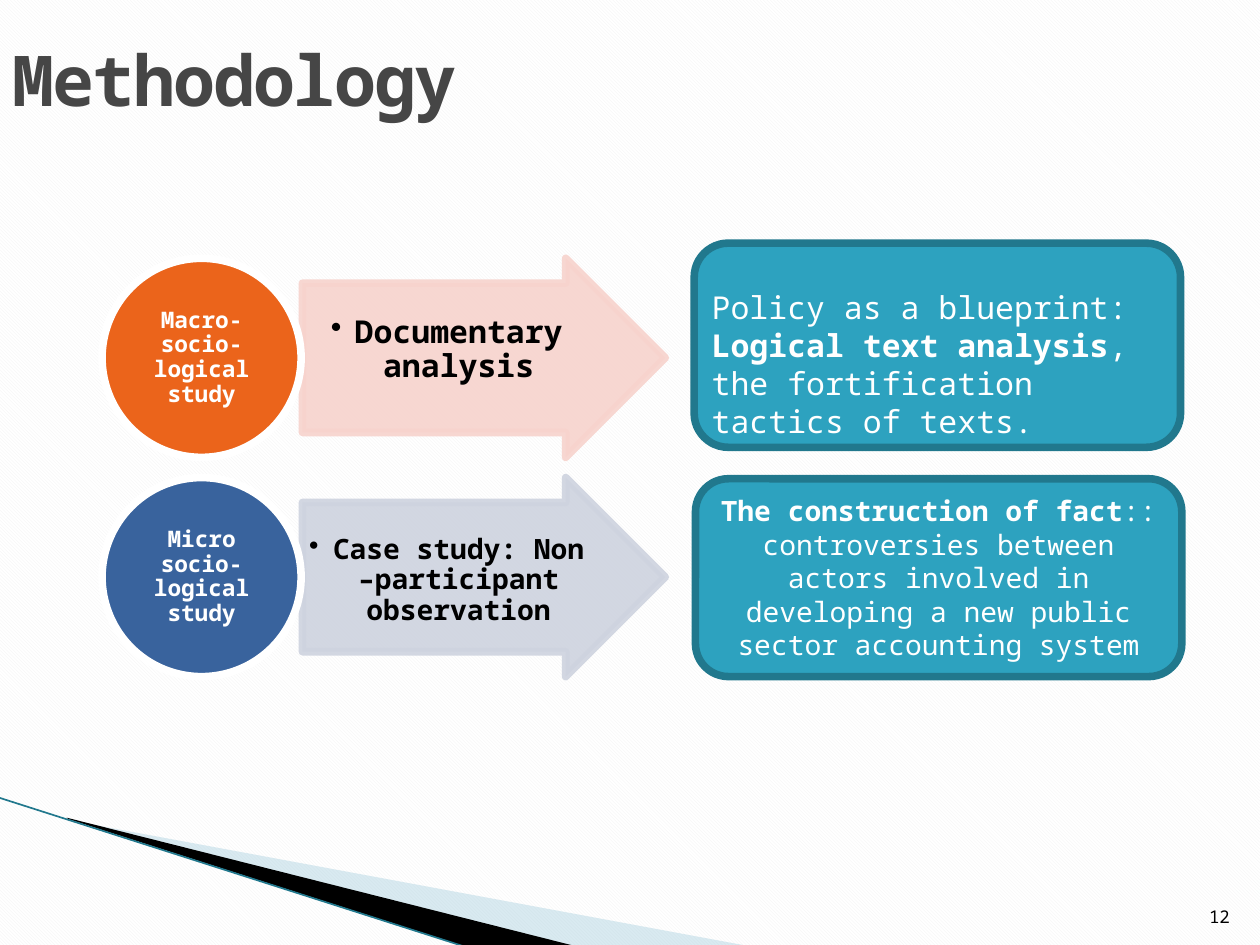
from lxml import etree
from pptx import Presentation
from pptx.dml.color import RGBColor
from pptx.enum.dml import MSO_PATTERN
from pptx.enum.shapes import MSO_CONNECTOR, MSO_SHAPE as SHAPE
from pptx.enum.text import MSO_ANCHOR as ANCHOR, PP_ALIGN as ALIGN
from pptx.oxml.ns import qn
from pptx.util import Inches, Pt

FONT = "Noto Sans Mono"
WHITE = RGBColor(0xFF, 0xFF, 0xFF)
BLACK = RGBColor(0, 0, 0)
HATCH = RGBColor(0xF2, 0xF2, 0xF2)
GREY = RGBColor(0x46, 0x46, 0x46)
PALE_BLUE = RGBColor(0xA0, 0xCB, 0xDC)
TEAL = RGBColor(0x2D, 0xA2, 0xBF)
DARK_TEAL = RGBColor(0x21, 0x78, 0x8D)
ORANGE = RGBColor(0xEB, 0x64, 0x1B)
BLUE = RGBColor(0x39, 0x63, 0x9D)
PINK = RGBColor(0xF7, 0xD3, 0xCD)
LAVENDER = RGBColor(0xCE, 0xD3, 0xDF)


def style(sp, fill, line=None, alpha=100):
    """Set fill, outline and opacity of a shape."""
    sp.shadow.inherit = False
    sp.fill.solid()
    sp.fill.fore_color.rgb = fill
    if line is None:
        sp.line.fill.background()
    else:
        sp.line.color.rgb = line
        sp.line.width = Pt(4.33)
    if alpha < 100:
        for clr in sp._element.spPr.iter(qn("a:srgbClr")):
            etree.SubElement(clr, qn("a:alpha"), val=str(alpha * 1000))


def write(sp, runs, size, color, align=ALIGN.LEFT, anchor=ANCHOR.TOP,
          margins=(0.1, 0.05, 0.1, 0.05)):
    """Fill a shape with one paragraph of (text, bold) runs."""
    tf = sp.text_frame
    tf.word_wrap = True
    tf.vertical_anchor = anchor
    (tf.margin_left, tf.margin_top,
     tf.margin_right, tf.margin_bottom) = [Inches(m) for m in margins]
    p = tf.paragraphs[0]
    p.alignment = align
    for text, bold in runs:
        r = p.add_run()
        r.text = text
        r.font.name = FONT
        r.font.size = Pt(size)
        r.font.bold = bold
        r.font.color.rgb = color
    return p


prs = Presentation()
prs.slide_width, prs.slide_height = Inches(10), Inches(7.5)
s = prs.slides.add_slide(prs.slide_layouts[6])

# Hatched background
bg = s.background.fill
bg.patterned()
bg.pattern = MSO_PATTERN.LIGHT_DOWNWARD_DIAGONAL
bg.fore_color.rgb = HATCH
bg.back_color.rgb = WHITE

# Swoosh in the lower left corner
wedges = [
    ([(0.55, 6.51), (5.95, 7.51), (4.56, 7.51), (0.55, 6.5)], PALE_BLUE, 40),
    ([(0.53, 6.49), (4.57, 7.51), (3.72, 7.52), (0.54, 6.5)], BLACK, 100),
]
for points, color, alpha in wedges:
    pts = [(Inches(x), Inches(y)) for x, y in points]
    fb = s.shapes.build_freeform(*pts[0])
    fb.add_line_segments(pts[1:])
    style(fb.convert_to_shape(), color, alpha=alpha)

edge = s.shapes.add_connector(MSO_CONNECTOR.STRAIGHT, Inches(-0.01), Inches(6.33),
                              Inches(3.71), Inches(7.52))
edge.line.color.rgb = DARK_TEAL
edge.line.width = Pt(0.95)
etree.SubElement(edge._element.spPr, qn("a:effectLst"))

# Title and slide number
title = s.shapes.add_textbox(0, 0, Inches(9), Inches(1.25))
p = write(title, [("Methodology", True)], 40, GREY, anchor=ANCHOR.MIDDLE)
p.runs[0].font._element.set("spc", "-100")
number = s.shapes.add_textbox(Inches(9.46), Inches(7.01), Inches(0.4), Inches(0.4))
write(number, [("12", False)], 10, BLACK, ALIGN.RIGHT, ANCHOR.BOTTOM)

# Study rows: arrow with method, circle with level
rows = [
    ("Macro-socio-logical study", ORANGE, "Documentary analysis", 18, PINK),
    ("Micro socio-logical study", BLUE, "Case study: Non –participant observation",
     16, LAVENDER),
]
for i, (level, color, method, size, tint) in enumerate(rows):
    top = 2.05 + 1.74 * i
    arrow = s.shapes.add_shape(SHAPE.RIGHT_ARROW, Inches(2.4), Inches(top),
                               Inches(2.88), Inches(1.58))
    arrow.adjustments[0] = 0.75
    style(arrow, tint, tint, 90)

    label = s.shapes.add_textbox(Inches(2.4), Inches(top + 0.2),
                                 Inches(2.29), Inches(1.19))
    p = write(label, [(method, True)], size, BLACK, ALIGN.CENTER,
              margins=(0.01, 0.26, 0.01, 0.01))
    p.line_spacing = 0.9
    pPr = p._p.get_or_add_pPr()
    pPr.set("marL", str(Inches(0.19)))
    pPr.set("indent", str(Inches(-0.19)))
    etree.SubElement(pPr, qn("a:buChar"), char="•")

    circle = s.shapes.add_shape(SHAPE.OVAL, Inches(0.81), Inches(top),
                                Inches(1.58), Inches(1.58))
    style(circle, color, WHITE)
    p = write(circle, [(level, True)], 13, WHITE, ALIGN.CENTER, ANCHOR.MIDDLE,
              (0.05, 0.03, 0.05, 0.03))
    p.line_spacing = 0.9

# Explanation panels
panels = []
for left, top, height in [(5.51, 1.93, 1.62), (5.52, 3.8, 1.57)]:
    panel = s.shapes.add_shape(SHAPE.ROUNDED_RECTANGLE, Inches(left), Inches(top),
                               Inches(3.86), Inches(height))
    style(panel, TEAL, DARK_TEAL)
    panels.append(panel)

policy = s.shapes.add_textbox(Inches(5.55), Inches(2.24), Inches(3.86), Inches(1.01))
write(policy, [("Policy as a blueprint: ", False), ("Logical text analysis", True),
               (", the fortification tactics of texts.", False)], 18, WHITE)
write(panels[1], [("The construction of fact", True),
                  (":: controversies between actors involved in developing "
                   "a new public sector accounting system", False)],
      16, WHITE, ALIGN.CENTER, ANCHOR.MIDDLE)

prs.save("out.pptx")
